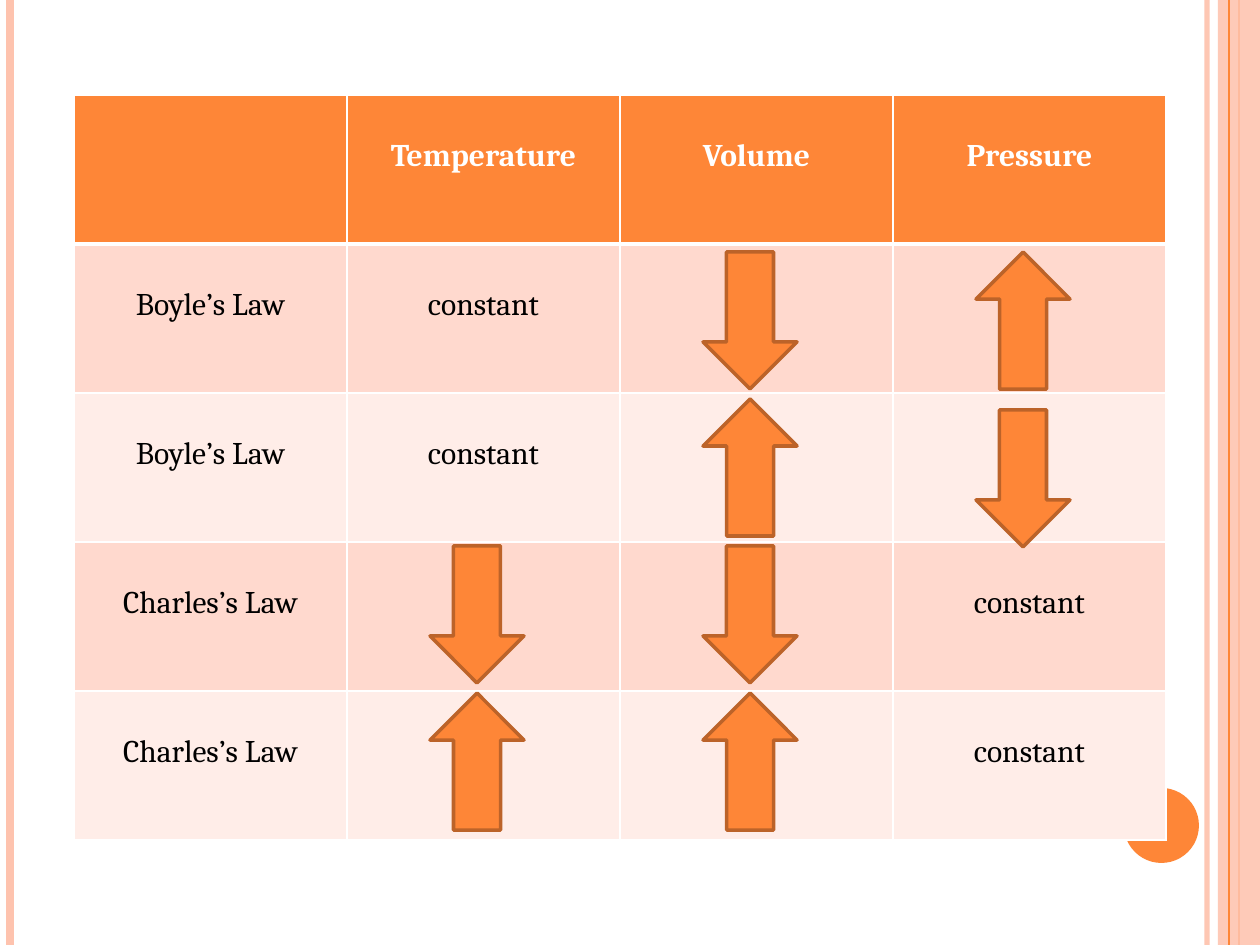
from lxml import etree
from pptx import Presentation
from pptx.dml.color import RGBColor
from pptx.enum.shapes import MSO_CONNECTOR, MSO_SHAPE
from pptx.enum.text import PP_ALIGN
from pptx.oxml.ns import qn
from pptx.util import Emu, Pt

RECT, OVAL, DOWN_ARROW = MSO_SHAPE.RECTANGLE, MSO_SHAPE.OVAL, MSO_SHAPE.DOWN_ARROW
STRAIGHT = MSO_CONNECTOR.STRAIGHT
CENTER = PP_ALIGN.CENTER

SLIDE_W, SLIDE_H = 1260, 945
TABLE_X, TABLE_Y, COL_W, ROW_H = 74, 95, 273, 149
ARROW_W, ARROW_H = 94, 137
ARROW_DX, ARROW_Y, ARROW_STEP = 83, 252, 147

ROWS = [
    ["", "Temperature", "Volume", "Pressure"],
    ["Boyle’s Law", "constant", "down", "up"],
    ["Boyle’s Law", "constant", "up", "down"],
    ["Charles’s Law", "down", "down", "constant"],
    ["Charles’s Law", "up", "up", "constant"],
]
ARROWS = ("down", "up")
NUDGE = {(2, 3): 11}  # this arrow sits lower than its row


def px(n):
    return Emu(round(n * 914400 / 126))


def rgb(hex_color):
    return RGBColor.from_string(hex_color)


class Deck:
    font, size = "Cambria", 18
    orange, edge, pink = "FE8637", "BC6329", "FEC3AE"
    white, black = "FFFFFF", "000000"
    bands = ["FFD9CE", "FFEDE8"]

    def __init__(self):
        self.prs = Presentation()
        self.prs.slide_width, self.prs.slide_height = px(SLIDE_W), px(SLIDE_H)
        self.s = self.prs.slides.add_slide(self.prs.slide_layouts[6])

    def set_alpha(self, sp, percent):
        """Make the first solid colour of a shape or line translucent."""
        color = next(sp._element.spPr.iter(qn("a:srgbClr")))
        etree.SubElement(color, qn("a:alpha")).set("val", str(percent * 1000))

    def vertical_line(self, x, color, width, alpha=100):
        ln = self.s.shapes.add_connector(STRAIGHT, px(x), 0, px(x), px(SLIDE_H))
        ln.line.color.rgb = rgb(color)
        ln.line.width = Pt(width)
        etree.SubElement(ln._element.spPr, qn("a:effectLst"))
        if alpha < 100:
            self.set_alpha(ln, alpha)

    def shape(self, kind, x, y, w, h, fill, line=None, alpha=100):
        sp = self.s.shapes.add_shape(kind, px(x), px(y), px(w), px(h))
        sp.shadow.inherit = False
        sp.fill.solid()
        sp.fill.fore_color.rgb = rgb(fill)
        if line:
            sp.line.color.rgb = rgb(line)
            sp.line.width = Pt(2)
        else:
            sp.line.fill.background()
        if alpha < 100:
            self.set_alpha(sp, alpha)
        return sp

    def arrow(self, row, col, direction):
        x = TABLE_X + col * COL_W + ARROW_DX
        y = ARROW_Y + (row - 1) * ARROW_STEP + NUDGE.get((row, col), 0)
        sp = self.shape(DOWN_ARROW, x, y, ARROW_W, ARROW_H, self.orange, self.edge)
        if direction == "up":
            sp.rotation = 180

    def borders(self, cell, top, bottom):
        tc_pr = cell._tc.get_or_add_tcPr()
        for i, (side, width) in enumerate(zip("LRTB", (1, 1, top, bottom))):
            ln = etree.Element(qn(f"a:ln{side}"), w=str(Pt(width)))
            fill = etree.SubElement(ln, qn("a:solidFill"))
            etree.SubElement(fill, qn("a:srgbClr"), val=self.white)
            tc_pr.insert(i, ln)

    def cell(self, cell, row, text):
        header = row == 0
        cell.fill.solid()
        cell.fill.fore_color.rgb = rgb(self.orange if header else self.bands[(row - 1) % 2])
        self.borders(cell, 3 if row == 1 else 1, 3 if header else 1)
        cell.margin_top = px(43)
        p = cell.text_frame.paragraphs[0]
        p.text = text
        p.alignment = CENTER
        for r in p.runs:
            r.font.name, r.font.size, r.font.bold = self.font, Pt(self.size), header
            r.font.color.rgb = rgb(self.white if header else self.black)

    def table(self, rows):
        n_rows, n_cols = len(rows), len(rows[0])
        table = self.s.shapes.add_table(n_rows, n_cols, px(TABLE_X), px(TABLE_Y),
                                        px(n_cols * COL_W), px(n_rows * ROW_H)).table
        table.first_row = table.horz_banding = False
        for column in table.columns:
            column.width = px(COL_W)
        for i, values in enumerate(rows):
            table.rows[i].height = px(ROW_H)
            for j, value in enumerate(values):
                self.cell(table.cell(i, j), i, "" if value in ARROWS else value)


def main():
    deck = Deck()
    deck.vertical_line(1207, deck.pink, 3, alpha=93)
    deck.vertical_line(10, deck.pink, 4.5)
    deck.vertical_line(1239, deck.orange, 1.5)
    deck.shape(RECT, 1218, 0, 42, SLIDE_H, deck.pink, alpha=87)
    deck.vertical_line(1229, deck.orange, 0.75)
    deck.shape(OVAL, 1124, 788, 75, 75, deck.orange)
    deck.table(ROWS)
    for i, values in enumerate(ROWS):
        for j, value in enumerate(values):
            if value in ARROWS:
                deck.arrow(i, j, value)
    deck.prs.save("out.pptx")


if __name__ == "__main__":
    main()
